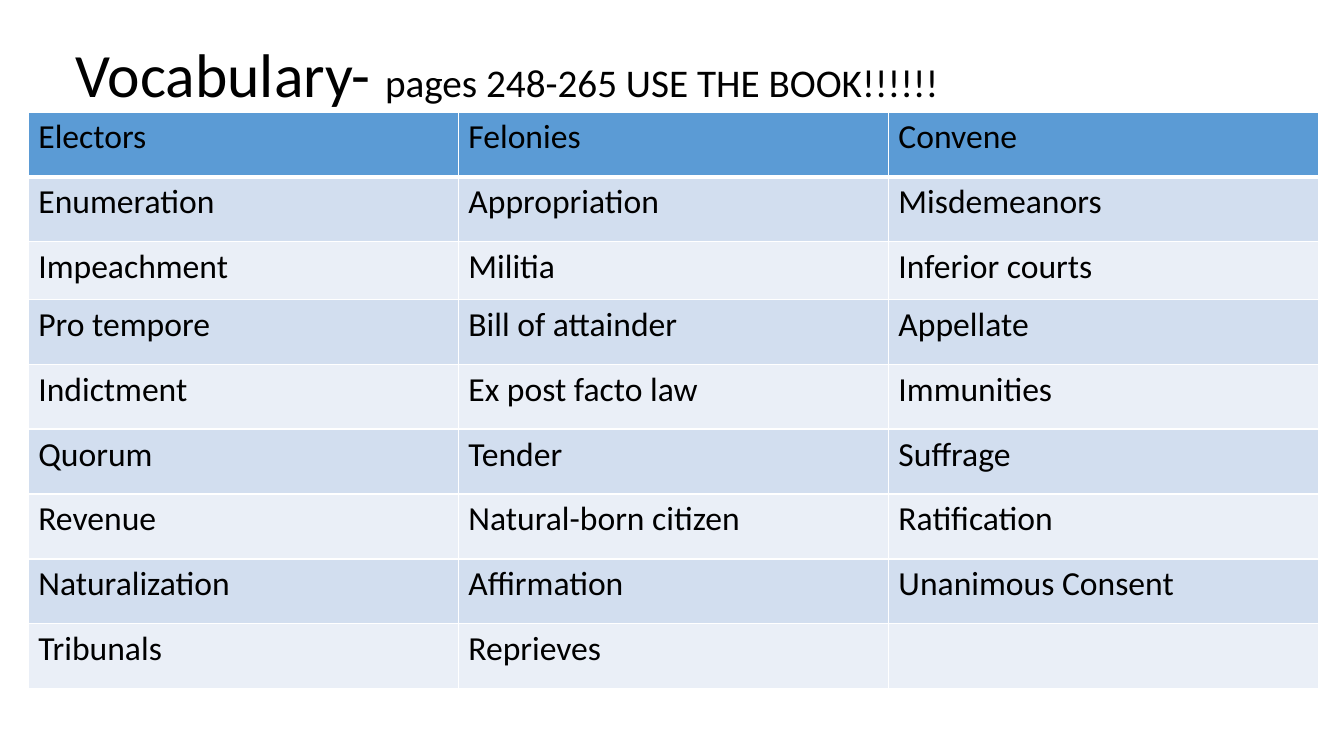
from lxml.etree import SubElement
from pptx import Presentation
from pptx.dml.color import RGBColor
from pptx.enum.text import MSO_ANCHOR
from pptx.oxml.ns import qn
from pptx.util import Pt

BLACK = RGBColor(0x00, 0x00, 0x00)
WHITE = RGBColor(0xFF, 0xFF, 0xFF)
HEADER_BLUE = RGBColor(0x5B, 0x9B, 0xD5)
BAND_DARK = RGBColor(0xD2, 0xDE, 0xEF)
BAND_LIGHT = RGBColor(0xEA, 0xEF, 0xF7)

WORDS = [
    ("Electors", "Felonies", "Convene"),
    ("Enumeration", "Appropriation", "Misdemeanors"),
    ("Impeachment", "Militia", "Inferior courts"),
    ("Pro tempore", "Bill of attainder", "Appellate"),
    ("Indictment", "Ex post facto law", "Immunities"),
    ("Quorum", "Tender", "Suffrage"),
    ("Revenue", "Natural-born citizen", "Ratification"),
    ("Naturalization", "Affirmation", "Unanimous Consent"),
    ("Tribunals", "Reprieves", ""),
]
COLUMN_WIDTH = 307.2
ROW_HEIGHT = 46.4
SHORT_ROW = 2
SHORT_HEIGHT = 41


def add_span(para, text, size=24, font="Calibri", color=BLACK):
    span = para.add_run()
    span.text = text
    span.font.size = Pt(size)
    span.font.name = font
    span.font.color.rgb = color


def add_border(cell, side, width):
    line = SubElement(cell._tc.get_or_add_tcPr(), qn(f"a:ln{side}"), w=str(Pt(width)))
    fill = SubElement(line, qn("a:solidFill"))
    SubElement(fill, qn("a:srgbClr"), val=str(WHITE))


deck = Presentation()
deck.slide_width = Pt(960)
deck.slide_height = Pt(540)
page = deck.slides.add_slide(deck.slide_layouts[6])

title = page.shapes.add_textbox(Pt(46.8), Pt(2.9), Pt(828), Pt(104.4))
title.text_frame.word_wrap = True
title.text_frame.vertical_anchor = MSO_ANCHOR.MIDDLE
heading = title.text_frame.paragraphs[0]
heading.line_spacing = 0.9
add_span(heading, "Vocabulary- ", size=44)
add_span(heading, "pages 248-265 USE THE BOOK!!!!!!", size=28)

row_count, column_count = len(WORDS), len(WORDS[0])
table = page.shapes.add_table(
    row_count, column_count, Pt(20.2), Pt(80),
    Pt(column_count * COLUMN_WIDTH),
    Pt((row_count - 1) * ROW_HEIGHT + SHORT_HEIGHT),
).table
table.first_row = False
table.horz_banding = False

for column in table.columns:
    column.width = Pt(COLUMN_WIDTH)

for row_index, row_words in enumerate(WORDS):
    table.rows[row_index].height = Pt(SHORT_HEIGHT if row_index == SHORT_ROW else ROW_HEIGHT)
    if row_index == 0:
        row_color = HEADER_BLUE
    else:
        row_color = BAND_DARK if row_index % 2 else BAND_LIGHT
    top_width = 3 if row_index == 1 else 1
    bottom_width = 3 if row_index == 0 else 1
    for column_index, word in enumerate(row_words):
        cell = table.cell(row_index, column_index)
        for side, width in (("L", 1), ("R", 1), ("T", top_width), ("B", bottom_width)):
            add_border(cell, side, width)
        cell.fill.solid()
        cell.fill.fore_color.rgb = row_color
        if word:
            add_span(cell.text_frame.paragraphs[0], word)

deck.save("out.pptx")
